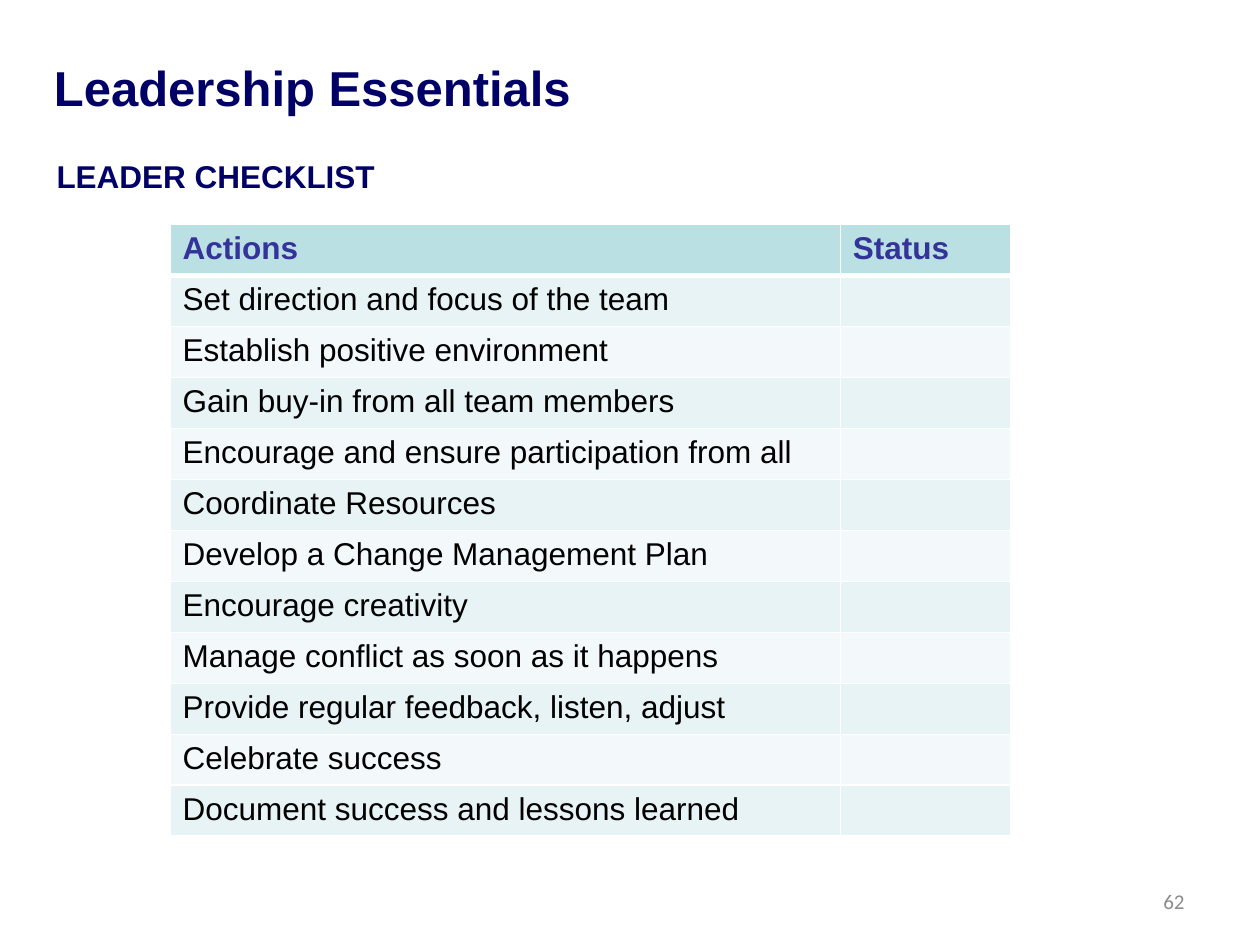
from lxml import etree
from pptx import Presentation
from pptx.dml.color import RGBColor
from pptx.enum.text import MSO_ANCHOR, PP_ALIGN
from pptx.oxml.ns import qn
from pptx.util import Inches, Pt

MIDDLE, TOP = MSO_ANCHOR.MIDDLE, MSO_ANCHOR.TOP
LEFT, RIGHT = PP_ALIGN.LEFT, PP_ALIGN.RIGHT

COLORS = {
    "heading": "000066", "header_text": "333399", "body_text": "000000",
    "page_number": "8C8C8C", "header_fill": "BBE0E3",
    "odd_fill": "E7F3F4", "even_fill": "F3F9FA", "border": "FFFFFF",
}

# text, (left, top, width, height), font, size, bold, color, anchor, alignment
TEXTS = [
    ("Leadership Essentials", (0.33, 0.25, 9.25, 0.88),
     "Arial", 28, True, "heading", MIDDLE, LEFT),
    ("LEADER CHECKLIST", (0.35, 1.2, 9.25, 5.64),
     "Arial", 18, True, "heading", TOP, LEFT),
    ("62", (7.17, 6.95, 2.33, 0.4),
     "Calibri", 12, False, "page_number", MIDDLE, RIGHT),
]

HEADERS = ["Actions", "Status"]
ACTIONS = [
    "Set direction and focus of the team",
    "Establish positive environment",
    "Gain buy-in from all team members",
    "Encourage and ensure participation from all",
    "Coordinate Resources",
    "Develop a Change Management Plan",
    "Encourage creativity",
    "Manage conflict as soon as it happens",
    "Provide regular feedback, listen, adjust",
    "Celebrate success",
    "Document success and lessons learned",
]
COLUMN_WIDTHS = [5.32, 1.35]
TABLE_LEFT, TABLE_TOP = 1.35, 1.78
TABLE_HEIGHT, SHORT_ROW_HEIGHT = 4.84, 0.38
SHORT_ROW = "Celebrate success"


def color(name):
    return RGBColor.from_string(COLORS[name])


def style_paragraph(paragraph, font_name, size, bold, color_name):
    font = paragraph.font
    font.name, font.size, font.bold = font_name, Pt(size), bold
    font.color.rgb = color(color_name)


def add_text(slide, text, box, font_name, size, bold, color_name, anchor, alignment):
    frame = slide.shapes.add_textbox(*map(Inches, box)).text_frame
    frame.word_wrap = True
    frame.vertical_anchor = anchor
    paragraph = frame.paragraphs[0]
    paragraph.text = text
    paragraph.alignment = alignment
    style_paragraph(paragraph, font_name, size, bold, color_name)


def set_borders(cell, widths):
    """Draw cell borders; widths maps lnL, lnR, lnT and lnB to points."""
    properties = cell._tc.get_or_add_tcPr()
    for position, (side, width) in enumerate(widths.items()):
        line = etree.Element(qn(f"a:{side}"), w=str(Pt(width)))
        fill = etree.SubElement(line, qn("a:solidFill"))
        etree.SubElement(fill, qn("a:srgbClr"), val=COLORS["border"])
        properties.insert(position, line)


def add_checklist(slide):
    rows = [HEADERS] + [[action, ""] for action in ACTIONS]
    table = slide.shapes.add_table(
        len(rows), len(HEADERS), Inches(TABLE_LEFT), Inches(TABLE_TOP),
        Inches(sum(COLUMN_WIDTHS)), Inches(TABLE_HEIGHT)).table
    for column, width in zip(table.columns, COLUMN_WIDTHS):
        column.width = Inches(width)

    regular_height = (TABLE_HEIGHT - SHORT_ROW_HEIGHT) / (len(rows) - 1)
    for r, values in enumerate(rows):
        is_header = r == 0
        is_short = values[0] == SHORT_ROW
        table.rows[r].height = Inches(SHORT_ROW_HEIGHT if is_short else regular_height)
        fill_name = "header_fill" if is_header else "odd_fill" if r % 2 else "even_fill"
        text_color = "header_text" if is_header else "body_text"
        borders = {"lnL": 1, "lnR": 1, "lnT": 3 if r == 1 else 1,
                   "lnB": 3 if is_header else 1}
        for c, value in enumerate(values):
            cell = table.cell(r, c)
            cell.text = value
            style_paragraph(cell.text_frame.paragraphs[0], "Arial", 18, is_header, text_color)
            cell.fill.solid()
            cell.fill.fore_color.rgb = color(fill_name)
            set_borders(cell, borders)


def main():
    presentation = Presentation()
    presentation.slide_width, presentation.slide_height = Inches(10), Inches(7.5)
    slide = presentation.slides.add_slide(presentation.slide_layouts[6])
    title, subtitle, page_number = TEXTS
    add_text(slide, *title)
    add_text(slide, *subtitle)
    add_checklist(slide)
    add_text(slide, *page_number)
    presentation.save("out.pptx")


if __name__ == "__main__":
    main()
